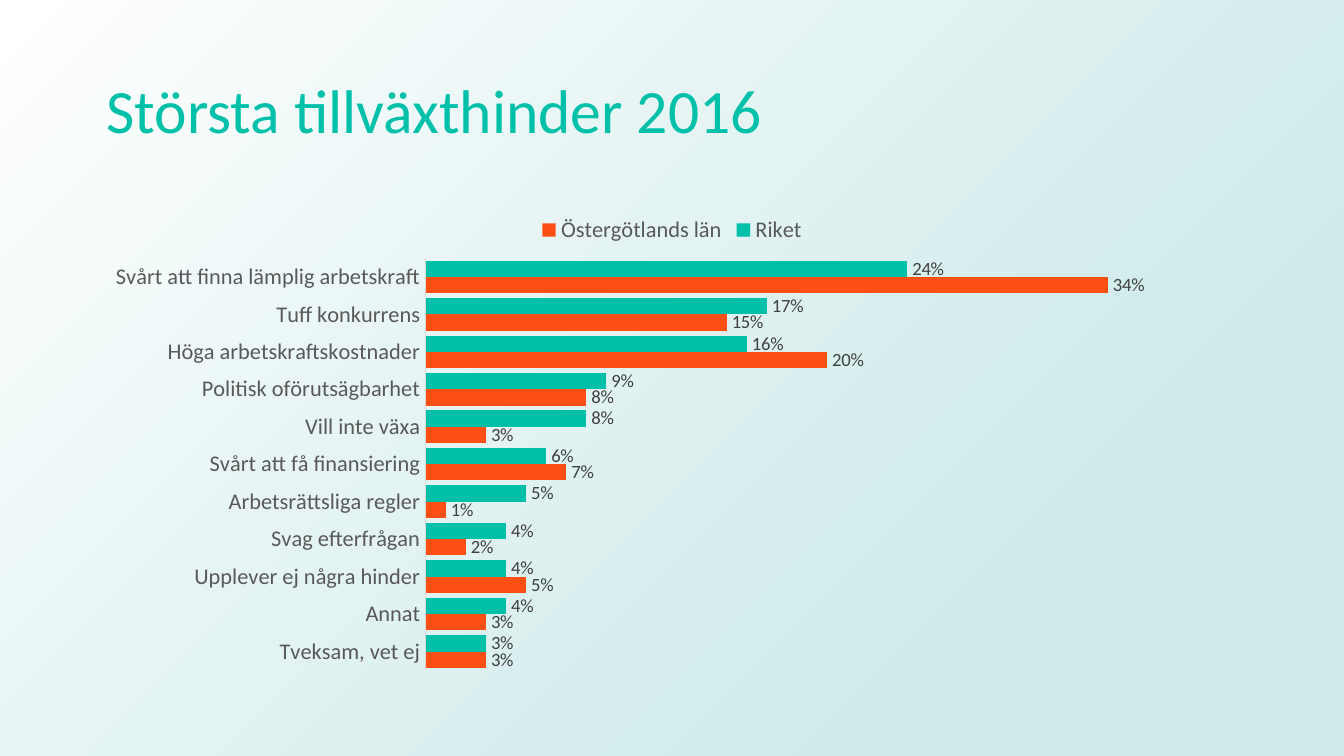
from dataclasses import dataclass

from pptx import Presentation
from pptx.chart.data import CategoryChartData
from pptx.dml.color import RGBColor
from pptx.enum.chart import (
    XL_CHART_TYPE as ChartType,
    XL_LABEL_POSITION as LabelPosition,
    XL_LEGEND_POSITION as LegendPosition,
    XL_TICK_MARK as TickMark,
)
from pptx.enum.shapes import MSO_SHAPE as Shape
from pptx.enum.text import MSO_ANCHOR as Anchor, MSO_AUTO_SIZE as AutoSize, PP_ALIGN as Align
from pptx.oxml import parse_xml
from pptx.oxml.ns import nsdecls, qn
from pptx.presentation import Presentation as Deck
from pptx.slide import Slide
from pptx.text.text import Font
from pptx.util import Inches, Pt


@dataclass(frozen=True)
class Theme:
    font: str = "Calibri"
    teal: str = "00C0A9"
    orange: str = "FB4F14"
    axis_text: str = "595959"
    label_text: str = "404040"
    axis_line: str = "D9D9D9"
    mist: str = "CDEAE9"
    white: str = "FFFFFF"
    title_size: int = 33
    axis_size: int = 12
    label_size: int = 10


@dataclass(frozen=True)
class Region:
    name: str
    color: str
    shares: tuple[float, ...]


THEME = Theme()

OBSTACLES = (
    "Svårt att finna lämplig arbetskraft",
    "Tuff konkurrens",
    "Höga arbetskraftskostnader",
    "Politisk oförutsägbarhet",
    "Vill inte växa",
    "Svårt att få finansiering",
    "Arbetsrättsliga regler",
    "Svag efterfrågan",
    "Upplever ej några hinder",
    "Annat",
    "Tveksam, vet ej",
)

REGIONS = (
    Region("Riket", THEME.teal,
           (0.24, 0.17, 0.16, 0.09, 0.08, 0.06, 0.05, 0.04, 0.04, 0.04, 0.03)),
    Region("Östergötlands län", THEME.orange,
           (0.34, 0.15, 0.20, 0.08, 0.03, 0.07, 0.01, 0.02, 0.05, 0.03, 0.03)),
)


def style_font(font: Font, size: int, color: str) -> None:
    font.name = THEME.font
    font.size = Pt(size)
    font.bold = False
    font.color.rgb = RGBColor.from_string(color)


def draw_backdrop(slide: Slide, deck: Deck) -> None:
    backdrop = slide.shapes.add_shape(
        Shape.RECTANGLE, 0, 0, deck.slide_width, deck.slide_height)
    backdrop.shadow.inherit = False
    backdrop.line.fill.background()
    gradient = parse_xml(
        f'<a:gradFill {nsdecls("a")} rotWithShape="1"><a:gsLst>'
        f'<a:gs pos="23000"><a:srgbClr val="{THEME.mist}"/></a:gs>'
        f'<a:gs pos="100000"><a:srgbClr val="{THEME.white}"/></a:gs>'
        '</a:gsLst><a:path path="circle">'
        '<a:fillToRect l="100000" t="100000"/></a:path></a:gradFill>')
    backdrop._element.spPr.find(qn("a:prstGeom")).addnext(gradient)
    slide.shapes._spTree.insert(2, backdrop._element)


def draw_title(slide: Slide, wording: str) -> None:
    title = slide.shapes.title
    title.left, title.top = Inches(0.69), Inches(0.3)
    title.width, title.height = Inches(8.62), Inches(1.09)
    frame = title.text_frame
    frame.text = wording
    frame.word_wrap = True
    frame.auto_size = AutoSize.NONE
    frame.vertical_anchor = Anchor.MIDDLE
    heading = frame.paragraphs[0]
    heading.alignment = Align.LEFT
    heading.line_spacing = 0.9
    style_font(heading.runs[0].font, THEME.title_size, THEME.teal)


def draw_chart(slide: Slide, regions: tuple[Region, ...]) -> None:
    survey = CategoryChartData(number_format="0%")
    survey.categories = OBSTACLES
    for region in regions:
        survey.add_series(region.name, region.shares)
    chart = slide.shapes.add_chart(
        ChartType.BAR_CLUSTERED, Inches(0.69), Inches(1.5),
        Inches(8.62), Inches(3.56), survey).chart
    chart.has_title = False
    chart.font.name = THEME.font
    chart.font.size = Pt(THEME.label_size)

    chart.has_legend = True
    chart.legend.position = LegendPosition.TOP
    chart.legend.include_in_layout = False
    style_font(chart.legend.font, THEME.axis_size, THEME.axis_text)

    obstacle_axis = chart.category_axis
    obstacle_axis.reverse_order = True
    obstacle_axis.major_tick_mark = TickMark.NONE
    obstacle_axis.minor_tick_mark = TickMark.NONE
    obstacle_axis.format.line.color.rgb = RGBColor.from_string(THEME.axis_line)
    obstacle_axis.format.line.width = Pt(0.75)
    style_font(obstacle_axis.tick_labels.font, THEME.axis_size, THEME.axis_text)

    share_axis = chart.value_axis
    share_axis.visible = False
    share_axis.has_major_gridlines = False
    share_axis.minimum_scale = 0
    share_axis.maximum_scale = 0.4
    share_axis.tick_labels.number_format = "0%"
    share_axis.tick_labels.number_format_is_linked = False

    plot = chart.plots[0]
    plot.gap_width = 30
    plot.overlap = 0
    plot.vary_by_categories = False
    for bars, region in zip(plot.series, regions):
        bars.invert_if_negative = False
        bars.format.fill.solid()
        bars.format.fill.fore_color.rgb = RGBColor.from_string(region.color)
        labels = bars.data_labels
        labels.show_value = True
        labels.number_format = "0%"
        labels.number_format_is_linked = False
        labels.position = LabelPosition.OUTSIDE_END
        style_font(labels.font, THEME.label_size, THEME.label_text)


def main() -> None:
    deck = Presentation()
    deck.slide_width = Inches(10)
    deck.slide_height = deck.slide_width * 9 // 16
    slide = deck.slides.add_slide(deck.slide_layouts[5])
    draw_backdrop(slide, deck)
    draw_title(slide, "Största tillväxthinder 2016")
    draw_chart(slide, REGIONS)
    deck.save("out.pptx")


if __name__ == "__main__":
    main()
